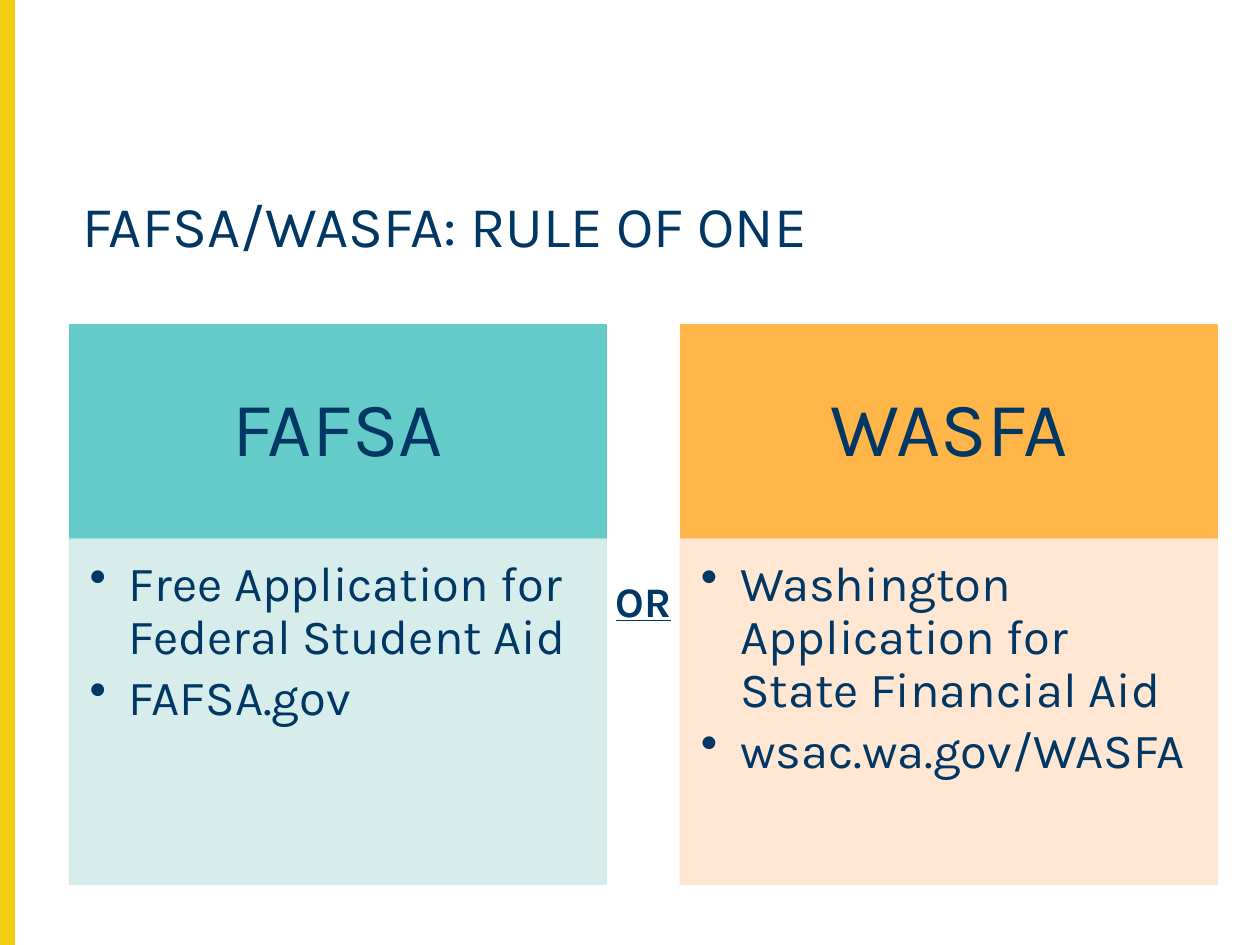
from lxml.etree import SubElement
from pptx import Presentation
from pptx.dml.color import RGBColor
from pptx.enum.shapes import MSO_SHAPE as Shape
from pptx.enum.text import MSO_ANCHOR as Anchor, PP_ALIGN as Align
from pptx.oxml.ns import qn
from pptx.util import Cm, Pt

# Content
TITLE = "FAFSA/WASFA: RULE OF ONE"
JOINER = "OR"
CARDS = [
    ("FAFSA", "65CBC9", "D3ECEB",
     ["Free Application for Federal Student Aid", "FAFSA.gov"]),
    ("WASFA", "FFB547", "FFE5CF",
     ["Washington Application for State Financial Aid", "wsac.wa.gov/WASFA"]),
]
FONT, NAVY, YELLOW = "Karla", "003764", "F4CE12"

# Layout in centimetres
LEFT, TOP, CARD_WIDTH, GAP = 1.4, 6.55, 10.82, 1.5
HEADER_HEIGHT, BODY_HEIGHT = 4.32, 6.96
BULLET_INDENT = 0.79


def color(value):
    return RGBColor.from_string(value)


def set_insets(frame, left, top, right, bottom):
    frame.margin_left, frame.margin_top = Cm(left), Cm(top)
    frame.margin_right, frame.margin_bottom = Cm(right), Cm(bottom)


def style_text(frame, size, align=Align.LEFT, spacing=0.9, after=0):
    frame.word_wrap = True
    for paragraph in frame.paragraphs:
        paragraph.alignment = align
        paragraph.line_spacing = spacing
        paragraph.space_before, paragraph.space_after = Pt(0), Pt(after)
        for run in paragraph.runs:
            run.font.name, run.font.size = FONT, Pt(size)
            run.font.color.rgb = color(NAVY)


def add_rectangle(slide, left, top, width, height, fill, opacity=100):
    shape = slide.shapes.add_shape(
        Shape.RECTANGLE, Cm(left), Cm(top), Cm(width), Cm(height))
    shape.shadow.inherit = False
    shape.fill.solid()
    shape.fill.fore_color.rgb = color(fill)
    shape.line.color.rgb = color(fill)
    shape.line.width = Pt(1)
    if opacity < 100:
        for element in shape.element.spPr.iter(qn("a:srgbClr")):
            SubElement(element, qn("a:alpha"), val=str(opacity * 1000))
    return shape


def add_bullet(paragraph):
    properties = paragraph._p.get_or_add_pPr()
    properties.set("marL", str(Cm(BULLET_INDENT)))
    properties.set("indent", str(-Cm(BULLET_INDENT)))
    SubElement(properties, qn("a:buChar"), char="•")


def add_card(slide, left, name, header_fill, body_fill, points):
    header = add_rectangle(
        slide, left, TOP, CARD_WIDTH, HEADER_HEIGHT, header_fill)
    frame = header.text_frame
    frame.text = name
    frame.vertical_anchor = Anchor.MIDDLE
    set_insets(frame, 0.86, 0.5, 0.86, 0.5)
    style_text(frame, 44, Align.CENTER)

    body = add_rectangle(slide, left, TOP + HEADER_HEIGHT, CARD_WIDTH,
                         BODY_HEIGHT, body_fill, opacity=90)
    frame = body.text_frame
    frame.text = "\n".join(points)
    frame.vertical_anchor = Anchor.TOP
    set_insets(frame, 0.41, 0.41, 0.56, 0.61)
    for paragraph in frame.paragraphs:
        add_bullet(paragraph)
    style_text(frame, 28, after=4.2)


def main():
    presentation = Presentation()
    presentation.slide_width, presentation.slide_height = Cm(25.4), Cm(19.05)
    slide = presentation.slides.add_slide(presentation.slide_layouts[5])

    # Edge stripe
    add_rectangle(slide, 0, 0, 0.28, 19.05, YELLOW)

    # Title
    title = slide.shapes.title
    title.left, title.top = Cm(LEFT), Cm(3.86)
    title.width, title.height = Cm(22.2), Cm(2.16)
    title.text_frame.text = TITLE
    title.text_frame.vertical_anchor = Anchor.TOP
    style_text(title.text_frame, 33)

    # Two cards
    for index, card in enumerate(CARDS):
        add_card(slide, LEFT + index * (CARD_WIDTH + GAP), *card)

    # Joining word, centred on the gap between the cards
    width = 2.46
    left = LEFT + CARD_WIDTH + (GAP - width) / 2
    joiner = slide.shapes.add_textbox(Cm(left), Cm(11.48), Cm(width), Cm(1.27))
    frame = joiner.text_frame
    frame.text = JOINER
    frame.vertical_anchor = Anchor.MIDDLE
    style_text(frame, 24, Align.CENTER, spacing=1)
    font = frame.paragraphs[0].runs[0].font
    font.bold = font.underline = True

    presentation.save("out.pptx")


if __name__ == "__main__":
    main()
